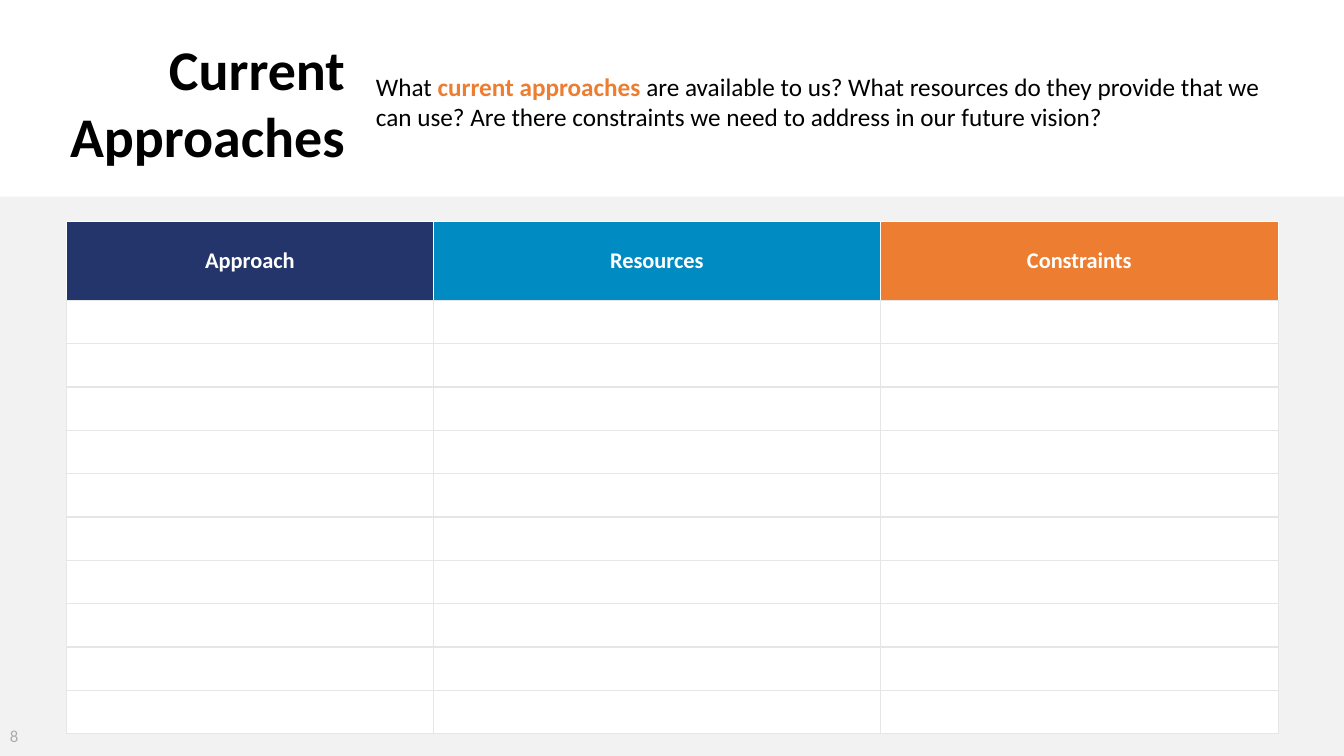
import dataclasses
import typing

import lxml.etree
import pptx
import pptx.dml.color
import pptx.enum.shapes
import pptx.enum.text
import pptx.oxml.ns
import pptx.util

PX = 9144  # EMU per px, 100 px to the inch
Align = pptx.enum.text.PP_ALIGN
Anchor = pptx.enum.text.MSO_ANCHOR


@dataclasses.dataclass(frozen=True)
class Theme:
    font: str = "Calibri"
    black: str = "000000"
    white: str = "FFFFFF"
    navy: str = "23356A"
    blue: str = "008BC3"
    orange: str = "EC7D31"
    panel: str = "F2F2F2"
    grid: str = "E7E6E6"
    gray: str = "AFABAB"
    title: int = 40
    body: int = 18
    head: int = 16
    note: int = 12


T = Theme()


class Box(typing.NamedTuple):
    left: int
    top: int
    width: int
    height: int

    def emu(self) -> list[int]:
        return [side * PX for side in self]


class Run(typing.NamedTuple):
    text: str
    size: int
    color: str = T.black
    bold: bool = False


class Column(typing.NamedTuple):
    name: str
    width: int
    color: str


COLUMNS = [
    Column("Approach", 364, T.navy),
    Column("Resources", 443, T.blue),
    Column("Constraints", 395, T.orange),
]
HEAD, ROW, COUNT = 78, 43, 10
INTRO = [
    Run("What ", T.body),
    Run("current approaches ", T.body, T.orange, True),
    Run("are available to us? What resources do they provide that we can use? "
        "Are there constraints we need to address in our future vision?", T.body),
]


def rgb(code: str) -> pptx.dml.color.RGBColor:
    return pptx.dml.color.RGBColor.from_string(code)


def write(frame, runs: list[Run], align=Align.LEFT) -> None:
    """Put the runs into the first paragraph of a text frame."""
    para = frame.paragraphs[0]
    para.alignment = align
    for item in runs:
        run = para.add_run()
        run.text = item.text
        run.font.name = T.font
        run.font.size = pptx.util.Pt(item.size)
        run.font.bold = item.bold
        run.font.color.rgb = rgb(item.color)


def label(slide, box: Box, runs: list[Run], anchor=Anchor.TOP) -> None:
    frame = slide.shapes.add_textbox(*box.emu()).text_frame
    frame.word_wrap = True
    frame.vertical_anchor = anchor
    write(frame, runs)


def title(slide, box: Box, run: Run) -> None:
    shape = slide.shapes.title
    shape.left, shape.top, shape.width, shape.height = box.emu()
    frame = shape.text_frame
    frame.word_wrap = True
    frame.auto_size = pptx.enum.text.MSO_AUTO_SIZE.NONE
    frame.vertical_anchor = Anchor.TOP
    write(frame, [run], Align.RIGHT)


def panel(slide, box: Box) -> None:
    kind = pptx.enum.shapes.MSO_SHAPE.RECTANGLE
    shape = slide.shapes.add_shape(kind, *box.emu())
    shape.shadow.inherit = False
    shape.fill.solid()
    shape.fill.fore_color.rgb = rgb(T.panel)
    shape.line.fill.background()


def paint(cell, fill: str, edge: str) -> None:
    """Fill a cell and rule it: edge on three sides, grid colour below."""
    qn = pptx.oxml.ns.qn
    props = cell._tc.get_or_add_tcPr()
    for side, color in zip("LRTB", (edge, edge, edge, T.grid)):
        line = lxml.etree.SubElement(props, qn(f"a:ln{side}"), w=str(pptx.util.Pt(1)))
        solid = lxml.etree.SubElement(line, qn("a:solidFill"))
        lxml.etree.SubElement(solid, qn("a:srgbClr"), val=color)
    cell.fill.solid()
    cell.fill.fore_color.rgb = rgb(fill)


def grid(slide, left: int, top: int) -> None:
    box = Box(left, top, sum(col.width for col in COLUMNS), HEAD + ROW * COUNT)
    table = slide.shapes.add_table(COUNT + 1, len(COLUMNS), *box.emu()).table
    table.horz_banding = False
    for i, row in enumerate(table.rows):
        row.height = (ROW if i else HEAD) * PX
    for j, col in enumerate(COLUMNS):
        table.columns[j].width = col.width * PX
        head = table.cell(0, j)
        paint(head, col.color, T.white)
        head.vertical_anchor = Anchor.MIDDLE
        write(head.text_frame, [Run(col.name, T.head, T.white, True)], Align.CENTER)
        for i in range(1, COUNT + 1):
            paint(table.cell(i, j), T.white, T.grid)


def main() -> None:
    deck = pptx.Presentation()
    deck.slide_width, deck.slide_height = 1333 * PX, 750 * PX
    slide = deck.slides.add_slide(deck.slide_layouts[5])
    title(slide, Box(30, 29, 322, 145), Run("Current Approaches", T.title, T.black, True))
    panel(slide, Box(0, 195, 1333, 555))
    label(slide, Box(0, 710, 60, 40), [Run("8", T.note, T.gray)], Anchor.MIDDLE)
    label(slide, Box(363, 66, 905, 71), INTRO)
    grid(slide, 66, 220)
    deck.save("out.pptx")


if __name__ == "__main__":
    main()
